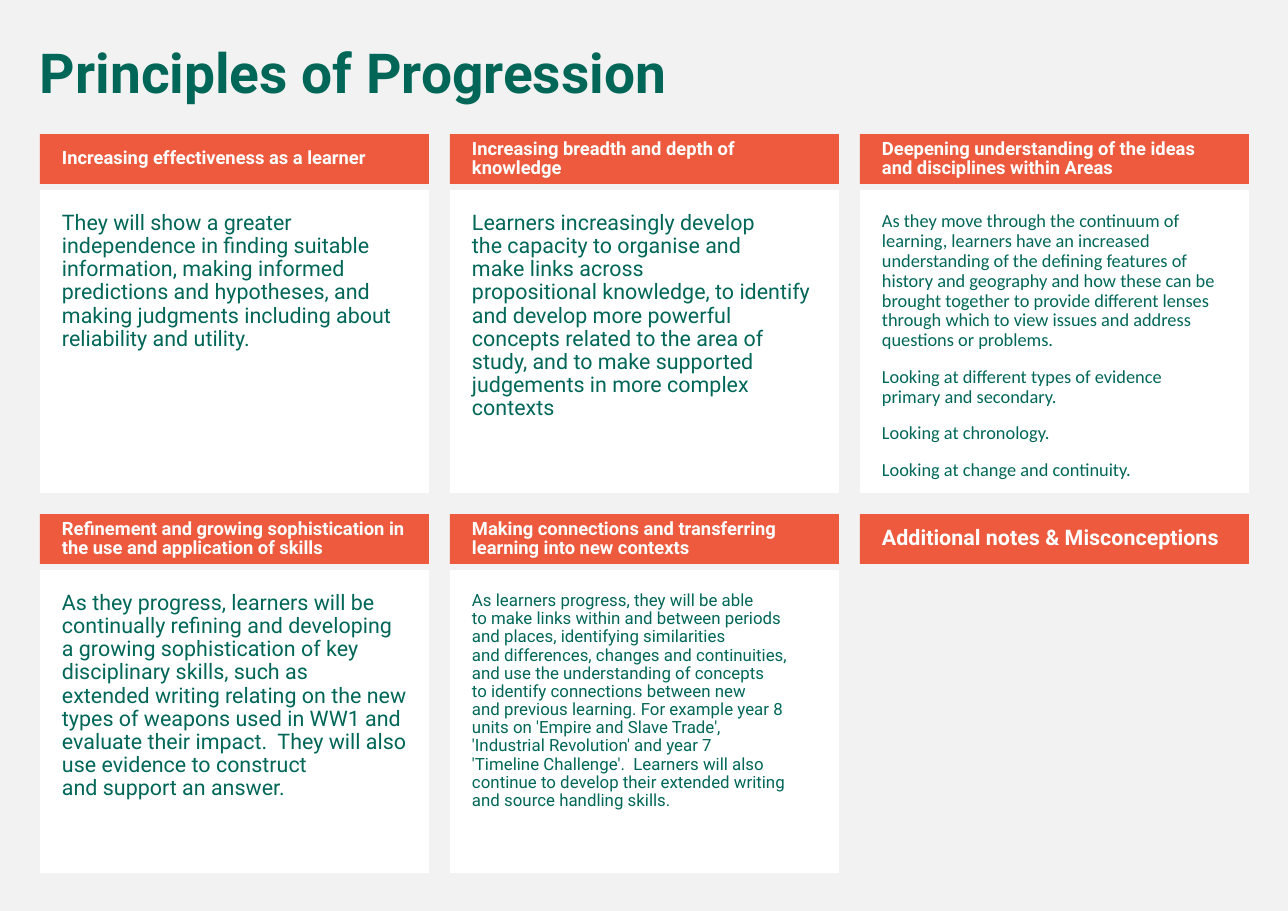
from dataclasses import dataclass

from pptx import Presentation
from pptx.dml.color import RGBColor
from pptx.enum.shapes import MSO_SHAPE
from pptx.enum.text import MSO_ANCHOR, PP_ALIGN
from pptx.util import Pt

RECTANGLE = MSO_SHAPE.RECTANGLE
TOP, MIDDLE = MSO_ANCHOR.TOP, MSO_ANCHOR.MIDDLE
LEFT = PP_ALIGN.LEFT

EMU_PER_PX = 8298
NO_BREAK_MARK, NO_BREAK_SPACE = "~", chr(160)


@dataclass(frozen=True)
class Theme:
    background: str = "F2F2F2"
    panel: str = "FFFFFF"
    header: str = "ED5A3E"
    header_text: str = "FFFFFF"
    body_text: str = "006758"
    font: str = "Roboto"
    alternate_font: str = "Calibri"
    title_size: int = 36
    large_size: int = 14
    medium_size: int = 12
    small_size: int = 11
    line_spacing: float = 0.9
    space_before: int = 11


THEME = Theme()

# Grid of cards, in px
GRID_LEFT, GRID_TOP = 40, 134
COLUMN_STEP, ROW_STEP = 410, 380
COLUMNS = 3
CARD_WIDTH, HEADER_HEIGHT = 389, 50
BODY_OFFSET, BODY_HEIGHT = 56, 303

# Header, header size, body paragraphs, body size, body font; ~ marks a no-break space
CARDS = [
    ("Increasing effectiveness as a learner", THEME.medium_size,
     ["They will show a greater independence in finding~suitable information, "
      "making informed predictions~and hypotheses, and making judgments "
      "including~about reliability and utility."],
     THEME.large_size, THEME.font),
    ("Increasing breadth and depth of knowledge", THEME.medium_size,
     ["Learners increasingly develop the~capacity to~organise~and make~links "
      "across propositional~knowledge, to identify and develop~more powerful "
      "concepts related to~the area of study, and to make~supported judgements "
      "in more~complex contexts"],
     THEME.large_size, THEME.font),
    ("Deepening understanding of the ideas and~disciplines within Areas",
     THEME.medium_size,
     ["As they move through the continuum of learning,~learners have an "
      "increased understanding of the~defining features of history and "
      "geography and~how these can be brought together to provide~different "
      "lenses through which to view issues and~address questions or~problems.~",
      "Looking at different types of evidence primary~and~secondary.",
      "Looking at~chronology.",
      "Looking at change and continuity."],
     THEME.medium_size, THEME.alternate_font),
    ("Refinement and growing sophistication in the use and~application of skills",
     THEME.medium_size,
     ["As they progress, learners will be continually~refining and developing a "
      "growing sophistication~of key disciplinary skills, such as "
      "extended~writing relating on the new types of~weapons~used~in WW1 and "
      "evaluate~their impact.~ They will also use evidence to construct "
      "and~support an answer."],
     THEME.large_size, THEME.font),
    ("Making connections and transferring learning into~new contexts",
     THEME.medium_size,
     ["As learners progress, they will be able to~make links within and between "
      "periods and~places, identifying similarities and~differences, changes and "
      "continuities, and~use the understanding of concepts to~identify "
      "connections between new and~previous learning. For~example~year 8 "
      "units~on 'Empire and Slave Trade', 'Industrial~Revolution' and year 7 "
      "'Timeline~Challenge'.~ Learners will also continue to~develop their "
      "extended writing and source~handling skills."],
     THEME.small_size, THEME.font),
    ("Additional notes & Misconceptions", THEME.large_size, [], None, None),
]


def px(length):
    return length * EMU_PER_PX


def rgb(color):
    return RGBColor.from_string(color)


class SlideBuilder:
    def __init__(self, slide, theme):
        self.slide = slide
        self.theme = theme

    def background(self):
        fill = self.slide.background.fill
        fill.solid()
        fill.fore_color.rgb = rgb(self.theme.background)

    def set_text(self, shape, paragraphs, size, color, font, bold, anchor, insets):
        frame = shape.text_frame
        frame.word_wrap = True
        frame.vertical_anchor = anchor
        (frame.margin_left, frame.margin_top,
         frame.margin_right, frame.margin_bottom) = map(px, insets)
        frame.text = "\n".join(paragraphs).replace(NO_BREAK_MARK, NO_BREAK_SPACE)
        for paragraph in frame.paragraphs:
            paragraph.alignment = LEFT
            paragraph.line_spacing = self.theme.line_spacing
            paragraph.space_before = Pt(self.theme.space_before)
            for run in paragraph.runs:
                run.font.name = font
                run.font.size = Pt(size)
                run.font.bold = bold
                run.font.color.rgb = rgb(color)

    def title(self, text, box):
        shape = self.slide.shapes.add_textbox(*map(px, box))
        self.set_text(shape, [text], self.theme.title_size, self.theme.body_text,
                      self.theme.font, True, TOP, (11, 6, 11, 6))

    def rectangle(self, box, color):
        shape = self.slide.shapes.add_shape(RECTANGLE, *map(px, box))
        shape.shadow.inherit = False
        shape.fill.solid()
        shape.fill.fore_color.rgb = rgb(color)
        shape.line.fill.background()
        return shape

    def header(self, text, size, left, top):
        shape = self.rectangle((left, top, CARD_WIDTH, HEADER_HEIGHT), self.theme.header)
        self.set_text(shape, [text], size, self.theme.header_text,
                      self.theme.font, True, MIDDLE, (22, 6, 11, 6))

    def body(self, paragraphs, size, font, left, top):
        shape = self.rectangle((left, top, CARD_WIDTH, BODY_HEIGHT), self.theme.panel)
        self.set_text(shape, paragraphs, size, self.theme.body_text,
                      font, False, TOP, (22, 22, 22, 22))


def main():
    presentation = Presentation()
    presentation.slide_width, presentation.slide_height = px(1288), px(911)
    slide = presentation.slides.add_slide(presentation.slide_layouts[6])
    builder = SlideBuilder(slide, THEME)

    # Background and title
    builder.background()
    builder.title("Principles of Progression", (29, 40, 1221, 72))

    # Cards, row by row
    for index, (heading, heading_size, paragraphs, size, font) in enumerate(CARDS):
        row, column = divmod(index, COLUMNS)
        left = GRID_LEFT + column * COLUMN_STEP
        top = GRID_TOP + row * ROW_STEP
        if paragraphs:
            builder.body(paragraphs, size, font, left, top + BODY_OFFSET)
        builder.header(heading, heading_size, left, top)

    presentation.save("out.pptx")


if __name__ == "__main__":
    main()
